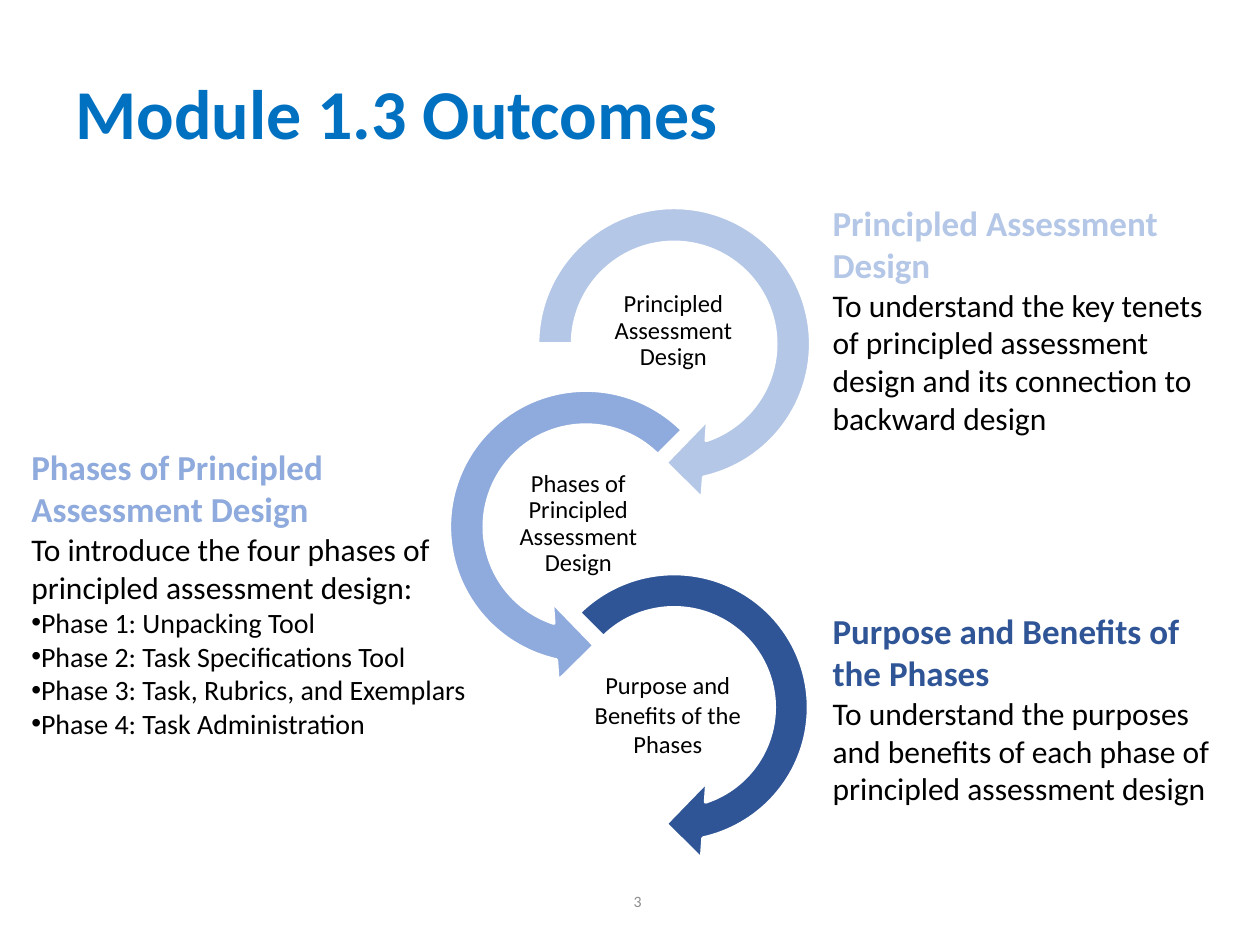
from lxml import etree
from pptx import Presentation
from pptx.dml.color import RGBColor
from pptx.enum.shapes import MSO_SHAPE
from pptx.enum.text import MSO_ANCHOR, MSO_AUTO_SIZE, PP_ALIGN
from pptx.oxml.ns import qn
from pptx.util import Inches, Pt

CLOCKWISE = MSO_SHAPE.CIRCULAR_ARROW
COUNTERCLOCKWISE = MSO_SHAPE.LEFT_CIRCULAR_ARROW
LEFT, CENTER, RIGHT = PP_ALIGN.LEFT, PP_ALIGN.CENTER, PP_ALIGN.RIGHT
TOP, MIDDLE = MSO_ANCHOR.TOP, MSO_ANCHOR.MIDDLE
GROW = MSO_AUTO_SIZE.SHAPE_TO_FIT_TEXT

FONT = "Calibri"
COLORS = {
    "title": "0070C0", "text": "000000", "number": "8C8C8C", "gap": "FFFFFF",
    "design": "B4C7E7", "phases": "8FAADC", "benefits": "2F5597",
}

# Content: places are left, top, width, height in inches
TITLE = "Module 1.3 Outcomes"
PAGE_NUMBER = "3"

# arrow kind, place, head and tail angles, colour, label, label place, line spacing
CYCLE = [
    (CLOCKWISE, (4.09, 1.47, 2.52, 2.52), (45, 108), "design",
     "Principled Assessment Design", (4.81, 2.28, 1.07, 0.7), 0.9),
    (COUNTERCLOCKWISE, (3.39, 2.92, 2.52, 2.52), (63, 189), "phases",
     "Phases of Principled Assessment Design", (3.88, 3.7, 1.42, 0.92), 0.9),
    (CLOCKWISE, (4.11, 4.38, 2.48, 2.47), (45, 135), "benefits",
     "Purpose and Benefits of the Phases", (4.54, 5.32, 1.52, 0.7), 1),
]

# place, colour, heading lines, outcome, bullets
OUTCOMES = [
    ((6.51, 1.55, 3.34, 2.52), "design", ["Principled Assessment Design"],
     "To understand the key tenets of principled assessment design and its "
     "connection to backward design", []),
    ((0.15, 3.49, 3.95, 2.46), "phases",
     ["Phases of Principled", "Assessment Design"],
     "To introduce the four phases of principled assessment design:",
     ["Phase 1: Unpacking Tool", "Phase 2: Task Specifications Tool",
      "Phase 3: Task, Rubrics, and Exemplars", "Phase 4: Task Administration"]),
    ((6.51, 4.79, 3.34, 1.68), "benefits",
     ["Purpose and Benefits of", "the Phases"],
     "To understand the purposes and benefits of each phase of principled "
     "assessment design", []),
]


def rgb(name):
    return RGBColor.from_string(COLORS[name])


def inches(place):
    return [Inches(length) for length in place]


def write(paragraph, text, size, color, bold=False, align=LEFT, spacing=None):
    paragraph.alignment = align
    paragraph.line_spacing = spacing
    run = paragraph.add_run()
    run.text = text
    run.font.name, run.font.size, run.font.bold = FONT, Pt(size), bold
    run.font.color.rgb = rgb(color)


def add_frame(slide, place, anchor=TOP, inset=None):
    frame = slide.shapes.add_textbox(*inches(place)).text_frame
    frame.word_wrap = True
    frame.vertical_anchor = anchor
    if inset is not None:
        frame.margin_left = frame.margin_right = Inches(inset)
        frame.margin_top = frame.margin_bottom = Inches(inset)
    return frame


def add_bullet(paragraph):
    properties = paragraph._p.get_or_add_pPr()
    properties.set("marL", "0")
    properties.set("indent", str(-Inches(0.25)))
    etree.SubElement(properties, qn("a:buFont")).set("typeface", "Arial")
    etree.SubElement(properties, qn("a:buChar")).set("char", "•")


def add_cycle_step(slide, kind, place, angles, color, label, label_place, spacing):
    arrow = slide.shapes.add_shape(kind, *inches(place))
    for index, value in enumerate((0.11, 11.42, *angles, 0.125)):
        arrow.adjustments[index] = value
    arrow.shadow.inherit = False
    arrow.fill.solid()
    arrow.fill.fore_color.rgb = rgb(color)
    arrow.line.color.rgb = rgb("gap")
    arrow.line.width = Pt(2)
    frame = add_frame(slide, label_place, MIDDLE, 0.01)
    write(frame.paragraphs[0], label, 14, "text", align=CENTER, spacing=spacing)


def add_outcome(slide, place, color, heading, outcome, bullets):
    frame = add_frame(slide, place)
    frame.auto_size = GROW
    lines = [(line, 20, color, True) for line in heading]
    lines.append((outcome, 18, "text", False))
    for index, line in enumerate(lines):
        paragraph = frame.add_paragraph() if index else frame.paragraphs[0]
        write(paragraph, *line)
    for bullet in bullets:
        paragraph = frame.add_paragraph()
        add_bullet(paragraph)
        write(paragraph, bullet, 16, "text")


def main():
    presentation = Presentation()
    presentation.slide_width, presentation.slide_height = Inches(10), Inches(7.5)
    slide = presentation.slides.add_slide(presentation.slide_layouts[5])

    # Title
    title = slide.shapes.title
    title.left, title.top, title.width, title.height = inches((0.5, 0.3, 9, 1.25))
    title.text_frame.vertical_anchor = MIDDLE
    write(title.text_frame.paragraphs[0], TITLE, 40, "title", True, spacing=0.9)

    # Chain of circular arrows
    for step in CYCLE:
        add_cycle_step(slide, *step)

    # Outcome texts beside the arrows
    for outcome in OUTCOMES:
        add_outcome(slide, *outcome)

    # Page number
    number = add_frame(slide, (2.94, 6.95, 2.25, 0.4), MIDDLE)
    write(number.paragraphs[0], PAGE_NUMBER, 9, "number", align=RIGHT)

    presentation.save("out.pptx")


if __name__ == "__main__":
    main()
